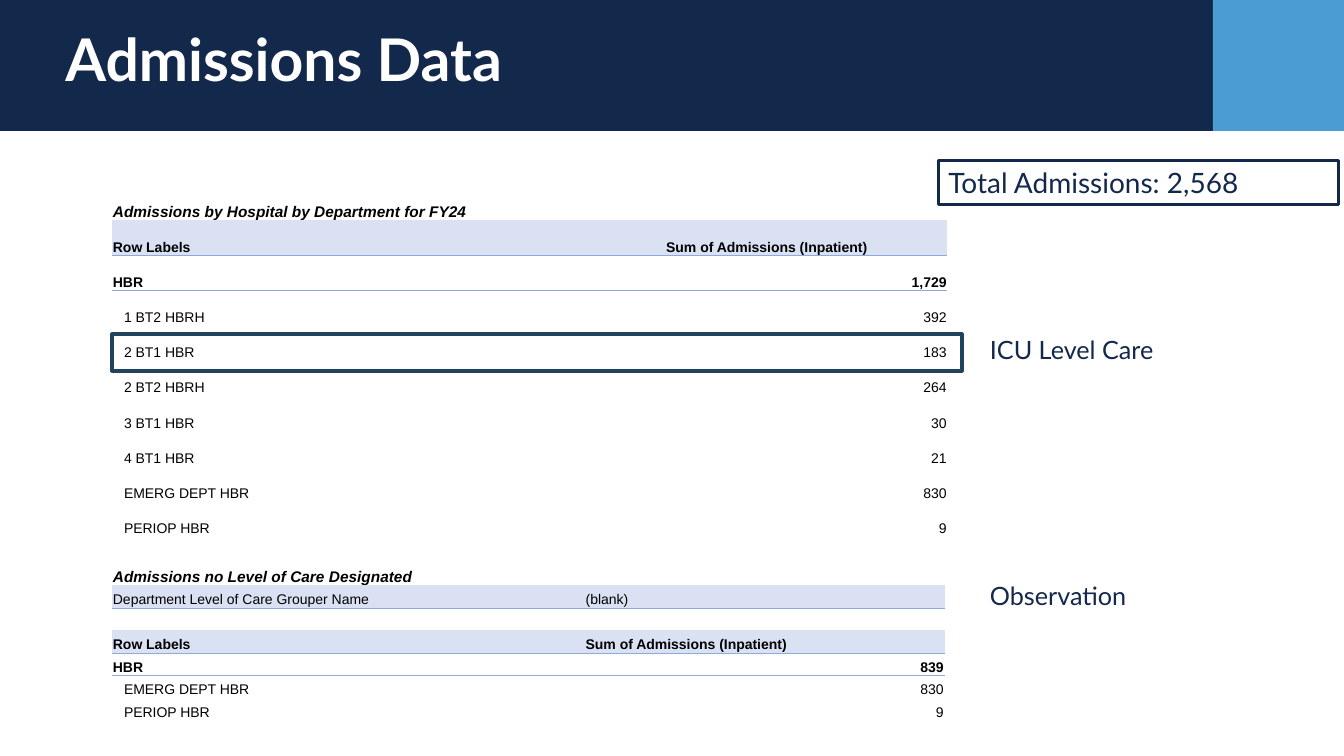
from lxml import etree
from pptx import Presentation
from pptx.dml.color import RGBColor
from pptx.enum import shapes, text
from pptx.oxml import ns
from pptx.util import Pt

NAVY = RGBColor(0x13, 0x29, 0x4B)
INK = RGBColor(0x13, 0x28, 0x4B)
SKY = RGBColor(0x4B, 0x9C, 0xD3)
TEAL = RGBColor(0x21, 0x44, 0x5C)
BAND = RGBColor(0xD9, 0xE1, 0xF2)
RULE = RGBColor(0x8E, 0xA9, 0xDB)
BLACK = RGBColor(0, 0, 0)
WHITE = RGBColor(255, 255, 255)
PLAIN_TABLE = "{2D5ABB26-0587-4C30-8999-92F81FD0307C}"
LEFT, CENTER, RIGHT = text.PP_ALIGN.LEFT, text.PP_ALIGN.CENTER, text.PP_ALIGN.RIGHT

TITLE = "Admissions Data"
TOTAL_ADMISSIONS = "Total Admissions: 2,568"
CARE_NOTES = [("ICU Level Care", 235.4, 150.5), ("Observation", 411.1, 140.4)]

# Row kind: bold, band fill, bottom rule, label indent, value alignment
ROW_KINDS = {
    "caption": (True, False, False, 0.7, LEFT),
    "filter": (False, True, True, 0.7, LEFT),
    "gap": (False, False, False, 0.7, LEFT),
    "header": (True, True, True, 0.7, LEFT),
    "centered header": (True, True, True, 0.7, CENTER),
    "total": (True, False, True, 0.7, RIGHT),
    "item": (False, False, False, 8.6, RIGHT),
}
BY_DEPARTMENT = [
    ("caption", "Admissions by Hospital by Department for FY24", ""),
    ("centered header", "Row Labels", "Sum of Admissions (Inpatient)"),
    ("total", "HBR", "1,729"),
    ("item", "1 BT2 HBRH", "392"),
    ("item", "2 BT1 HBR", "183"),
    ("item", "2 BT2 HBRH", "264"),
    ("item", "3 BT1 HBR", "30"),
    ("item", "4 BT1 HBR", "21"),
    ("item", "EMERG DEPT HBR", "830"),
    ("item", "PERIOP HBR", "9"),
]
NO_LEVEL_OF_CARE = [
    ("caption", "Admissions no Level of Care Designated", ""),
    ("filter", "Department Level of Care Grouper Name", "(blank)"),
    ("gap", "", ""),
    ("header", "Row Labels", "Sum of Admissions (Inpatient)"),
    ("total", "HBR", "839"),
    ("item", "EMERG DEPT HBR", "830"),
    ("item", "PERIOP HBR", "9"),
]
# Rows, top, column widths, caption height, row height
TABLES = [
    (BY_DEPARTMENT, 129.6, (338.4, 258.4), 27.8, 25.1),
    (NO_LEVEL_OF_CARE, 400.3, (337.7, 257), 17.8, 16.1),
]
TABLE_LEFT = 80

prs = Presentation()
prs.slide_width, prs.slide_height = Pt(960), Pt(540)
slide = prs.slides.add_slide(prs.slide_layouts[6])


def add_box(left, top, width, height, fill=None, line=None, weight=0):
    box = slide.shapes.add_shape(shapes.MSO_SHAPE.RECTANGLE,
                                 Pt(left), Pt(top), Pt(width), Pt(height))
    box.shadow.inherit = False
    if fill is None:
        box.fill.background()
    else:
        box.fill.solid()
        box.fill.fore_color.rgb = fill
    if line is None:
        box.line.fill.background()
    else:
        box.line.color.rgb = line
        box.line.width = Pt(weight)
    return box


def add_label(left, top, width, height):
    return slide.shapes.add_textbox(Pt(left), Pt(top), Pt(width), Pt(height))


def write(holder, words, size, color, font="Lato", bold=False, italic=False, align=LEFT):
    """Put one styled paragraph into a shape or a table cell."""
    frame = holder.text_frame
    frame.word_wrap = True
    paragraph = frame.paragraphs[0]
    paragraph.text = words
    paragraph.alignment = align
    paragraph.font.name, paragraph.font.size = font, Pt(size)
    paragraph.font.bold, paragraph.font.italic = bold, italic
    paragraph.font.color.rgb = color
    return paragraph


def add_bottom_rule(cell):
    line = etree.SubElement(cell._tc.get_or_add_tcPr(), ns.qn("a:lnB"), w=str(Pt(0.5)))
    fill = etree.SubElement(line, ns.qn("a:solidFill"))
    etree.SubElement(fill, ns.qn("a:srgbClr"), val=str(RULE))


def add_admissions_table(rows, top, widths, caption_height, row_height):
    heights = [caption_height] + [row_height] * (len(rows) - 1)
    table = slide.shapes.add_table(len(rows), len(widths), Pt(TABLE_LEFT), Pt(top),
                                   Pt(sum(widths)), Pt(sum(heights))).table
    table._tbl.tblPr.find(ns.qn("a:tableStyleId")).text = PLAIN_TABLE
    table.first_row = table.horz_banding = False
    for column, width in zip(table.columns, widths):
        column.width = Pt(width)
    for r, (kind, label, value) in enumerate(rows):
        table.rows[r].height = Pt(heights[r])
        bold, banded, ruled, indent, value_align = ROW_KINDS[kind]
        is_caption = kind == "caption"
        for c, (words, inset, align) in enumerate([(label, indent, LEFT),
                                                   (value, 0.7, value_align)]):
            cell = table.cell(r, c)
            cell.margin_left, cell.margin_right = Pt(inset), Pt(0.7)
            cell.margin_top, cell.margin_bottom = Pt(0.7), 0
            cell.vertical_anchor = text.MSO_ANCHOR.BOTTOM
            write(cell, words, 11 if is_caption else 10, BLACK, "Arial",
                  bold, is_caption, align)
            if ruled:
                add_bottom_rule(cell)
            if banded:
                cell.fill.solid()
                cell.fill.fore_color.rgb = BAND
            else:
                cell.fill.background()
        if is_caption:
            table.cell(r, 0).merge(table.cell(r, 1))


add_box(0, 0, 866.4, 93.6, NAVY)
add_box(866.4, 0, 93.6, 93.6, SKY)
title = add_label(39.6, 20.2, 769, 49)
title.text_frame.vertical_anchor = text.MSO_ANCHOR.MIDDLE
write(title, TITLE, 42, WHITE, bold=True).line_spacing = 0.9

for table_content in TABLES:
    add_admissions_table(*table_content)

add_box(80, 238.8, 607, 26, line=TEAL, weight=2.75)
for note, top, width in CARE_NOTES:
    write(add_label(700, top, width, 29), note, 18, INK)

total_box = add_box(670.3, 114.5, 285.8, 31.5, line=INK, weight=2.25)
write(total_box, TOTAL_ADMISSIONS, 20, INK)

prs.save("out.pptx")
